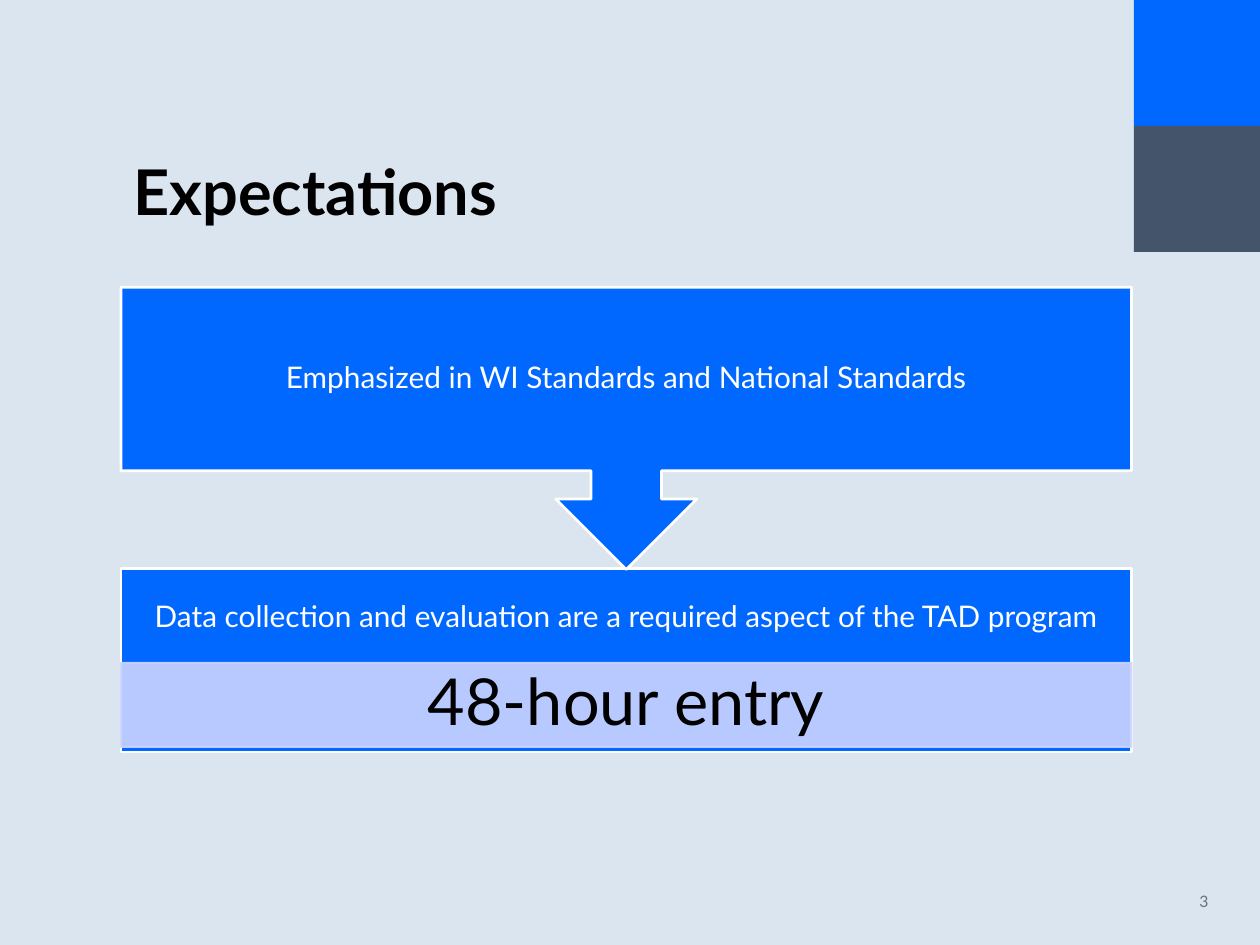
from pptx import Presentation
from pptx.dml.color import RGBColor
from pptx.enum.shapes import MSO_SHAPE as Shape
from pptx.enum.text import MSO_ANCHOR as Anchor, PP_ALIGN as Align
from pptx.oxml.ns import qn
from pptx.util import Inches, Pt
from lxml.etree import SubElement

FONT = "Lato"
BLUE, SLATE, WHITE, BLACK = "0068FF", "44546A", "FFFFFF", "000000"
LAVENDER, GREY, BACKGROUND = "CCD4FF", "637183", "DAE5EF"
LEFT, WIDTH = 0.96, 8.02
BOX_HEIGHT = 1.46
CALLOUT_TOP, PROGRAM_TOP, ENTRY_TOP = 2.28, 4.51, 5.26
CALLOUT_INSETS = (0.13, 0.13)


def paint(color_format, color, alpha=None):
    color_format.solid()
    color_format.fore_color.rgb = RGBColor.from_string(color)
    if alpha is not None:
        for node in color_format._xPr.iter(qn("a:srgbClr")):
            SubElement(node, qn("a:alpha")).set("val", str(alpha * 1000))


def add_block(page, kind, top, height, fill, line, line_width, alpha=None):
    block = page.shapes.add_shape(
        kind, Inches(LEFT), Inches(top), Inches(WIDTH), Inches(height))
    block.shadow.inherit = False
    paint(block.fill, fill, alpha)
    block.line.width = Pt(line_width)
    paint(block.line.fill, line, alpha)
    return block


def add_text(page, text, place, size, color, align=Align.CENTER,
             anchor=Anchor.MIDDLE, insets=(0.1, 0.05), bold=False, spacing=0.9):
    box = page.shapes.add_textbox(*map(Inches, place))
    frame = box.text_frame
    frame.word_wrap = True
    frame.vertical_anchor = anchor
    frame.margin_left = frame.margin_right = Inches(insets[0])
    frame.margin_top = frame.margin_bottom = Inches(insets[1])
    para = frame.paragraphs[0]
    para.alignment = align
    para.line_spacing = spacing
    span = para.add_run()
    span.text = text
    span.font.name = FONT
    span.font.size = Pt(size)
    span.font.bold = bold
    span.font.color.rgb = RGBColor.from_string(color)


def curve_points(start, first, second, end, steps=24):
    for step in range(1, steps + 1):
        t = step / steps
        yield tuple(
            (1 - t) ** 3 * a + 3 * (1 - t) ** 2 * t * b
            + 3 * (1 - t) * t ** 2 * c + t ** 3 * d
            for a, b, c, d in zip(start, first, second, end))


def add_leaf(page, color, base, direction):
    points = [(9.36, 0)]
    points += curve_points((9.36, 0), (9.71, 0), (10, 0.38), (10, 0.86))
    points.append((9.61, 0.86))
    points += curve_points((9.61, 0.86), (9.27, 0.86), (9, 0.52), (8.96, 0.09))
    placed = [(x, base + direction * y) for x, y in points]
    builder = page.shapes.build_freeform(8.96, base, scale=Inches(1))
    builder.add_line_segments(placed, close=True)
    leaf = builder.convert_to_shape()
    leaf.shadow.inherit = False
    paint(leaf.fill, color)
    leaf.line.fill.background()


def add_flow(page):
    add_block(page, Shape.RECTANGLE, PROGRAM_TOP, BOX_HEIGHT, BLUE, WHITE, 1.5)
    add_text(page, "Data collection and evaluation are a required aspect of the TAD program",
             (LEFT, PROGRAM_TOP, WIDTH, 0.79), 17, WHITE, insets=CALLOUT_INSETS)
    add_block(page, Shape.RECTANGLE, ENTRY_TOP, 0.67, LAVENDER, LAVENDER, 1, alpha=90)
    add_text(page, "48-hour entry", (LEFT, ENTRY_TOP, WIDTH, 0.67), 37, BLACK,
             insets=(0.29, 0.05))
    callout = add_block(page, Shape.UP_ARROW_CALLOUT, CALLOUT_TOP, 2.24, BLUE, WHITE, 1.5)
    callout.rotation = 180
    add_text(page, "Emphasized in WI Standards and National Standards",
             (LEFT, CALLOUT_TOP, WIDTH, BOX_HEIGHT), 17, WHITE, insets=CALLOUT_INSETS)


def main():
    deck = Presentation()
    deck.slide_width, deck.slide_height = Inches(10), Inches(7.5)
    page = deck.slides.add_slide(deck.slide_layouts[6])
    paint(page.background.fill, BACKGROUND)
    add_leaf(page, BLUE, 0, 1)
    add_leaf(page, SLATE, 1.72, -1)
    add_text(page, "Expectations", (LEFT, 0.42, WIDTH, 1.45), 36, BLACK,
             align=Align.LEFT, anchor=Anchor.BOTTOM, bold=True)
    add_text(page, "3", (8.33, 6.95, 1.36, 0.4), 9, GREY, align=Align.RIGHT, spacing=1.0)
    add_flow(page)
    deck.save("out.pptx")


if __name__ == "__main__":
    main()
